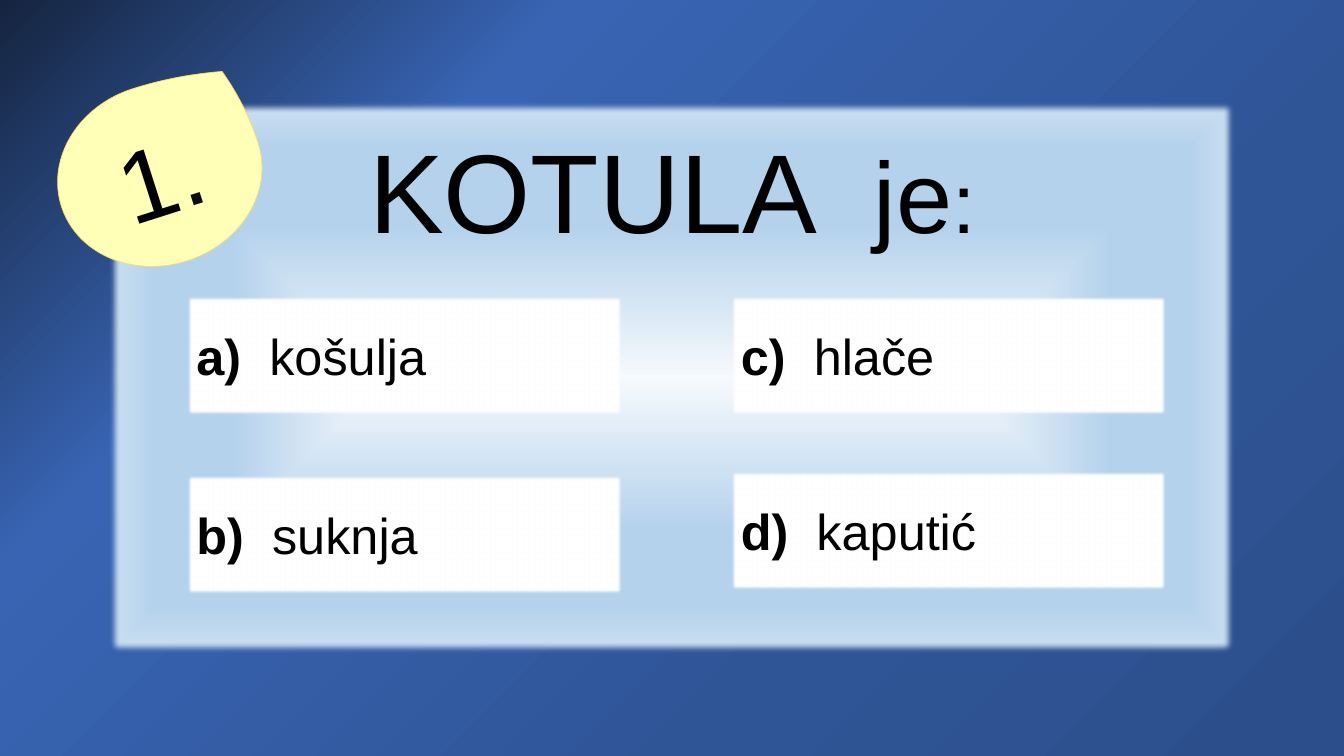
"""Build a quiz slide with one question and four possible answers."""
import dataclasses

import pptx
import pptx.dml.color
import pptx.enum.shapes
import pptx.enum.text
import pptx.oxml.ns
import pptx.oxml.xmlchemy
import pptx.util
from lxml import etree

EMU_PER_PX = 9144
ALIGN = pptx.enum.text.PP_ALIGN
ANCHOR = pptx.enum.text.MSO_ANCHOR
SHAPES = pptx.enum.shapes.MSO_SHAPE


@dataclasses.dataclass(frozen=True)
class Theme:
    font: str = "Arial"
    ink: str = "000000"
    dot: str = "0D0D0D"
    answer_fill: str = "FFFFFF"
    badge_fill: str = "FFFFB7"
    badge_line: str = "FFD966"
    background: tuple = ((0, "15243F"), (27, "3864B3"), (69, "2F5597"), (97, "2C4F8C"))
    panel: tuple = ((0, "F7FAFD"), (54, "B5D2EC"), (83, "B5D2EC"), (100, "CEE1F2"))
    word_size: int = 80
    verb_size: int = 72
    colon_size: int = 60
    badge_size: int = 72
    answer_size: int = 36


THEME = Theme()


def px(length):
    return pptx.util.Emu(length * EMU_PER_PX)


def rgb(value):
    return pptx.dml.color.RGBColor.from_string(value)


def add_child(parent, tag, **attributes):
    values = {name: str(value) for name, value in attributes.items()}
    return etree.SubElement(parent, pptx.oxml.ns.qn(tag), values)


def paint_gradient(fill, owner, stops, from_centre=False):
    fill.gradient()
    gradient = next(owner.iter(pptx.oxml.ns.qn("a:gradFill")))
    for child in list(gradient):
        gradient.remove(child)
    stop_list = add_child(gradient, "a:gsLst")
    for position, colour in stops:
        stop = add_child(stop_list, "a:gs", pos=position * 1000)
        add_child(stop, "a:srgbClr", val=colour)
    if from_centre:
        centre = add_child(gradient, "a:path", path="shape")
        add_child(centre, "a:fillToRect", l=50000, t=50000, r=50000, b=50000)
    else:
        add_child(gradient, "a:lin", ang=45 * 60000, scaled=0)


def add_block(slide, kind, left, top, width, height, fill=None):
    shape = slide.shapes.add_shape(kind, px(left), px(top), px(width), px(height))
    shape.shadow.inherit = False
    shape.line.fill.background()
    if fill:
        shape.fill.solid()
        shape.fill.fore_color.rgb = rgb(fill)
    return shape


def soften_edge(shape, radius):
    effects = next(shape._element.iter(pptx.oxml.ns.qn("a:effectLst")))
    add_child(effects, "a:softEdge", rad=px(radius))


def write_runs(shape, runs, alignment, anchor=ANCHOR.MIDDLE):
    shape.text_frame.vertical_anchor = anchor
    shape.text_frame.word_wrap = True
    paragraph = shape.text_frame.paragraphs[0]
    paragraph.alignment = alignment
    for text, size, colour, bold in runs:
        run = paragraph.add_run()
        run.text = text
        run.font.name = THEME.font
        run.font.size = pptx.util.Pt(size)
        run.font.color.rgb = rgb(colour)
        run.font.bold = bold


def add_question(slide):
    panel = add_block(slide, SHAPES.RECTANGLE, 107, 100, 1120, 550)
    paint_gradient(panel.fill, panel._element, THEME.panel, from_centre=True)
    soften_edge(panel, 7)
    panel.text_frame.margin_top = px(21)
    runs = [
        ("KOTULA  ", THEME.word_size, THEME.ink, False),
        ("je", THEME.verb_size, THEME.ink, False),
        (":", THEME.colon_size, THEME.ink, False),
    ]
    write_runs(panel, runs, ALIGN.CENTER, ANCHOR.TOP)


def add_answer(slide, left, top, letter, answer):
    box = add_block(slide, SHAPES.RECTANGLE, left, top, 432, 119, THEME.answer_fill)
    soften_edge(box, 3)
    runs = [
        (f"{letter})  ", THEME.answer_size, THEME.ink, True),
        (answer, THEME.answer_size, THEME.ink, False),
    ]
    write_runs(box, runs, ALIGN.LEFT)


def add_badge(slide, number):
    badge = add_block(slide, SHAPES.TEAR, 56, 84, 205, 179, THEME.badge_fill)
    badge.adjustments[0] = 0.88
    badge.rotation = 342.2
    badge.line.color.rgb = rgb(THEME.badge_line)
    badge.line.width = pptx.util.Pt(0.5)
    runs = [
        (number, THEME.badge_size, THEME.ink, False),
        (".", THEME.badge_size, THEME.dot, False),
    ]
    write_runs(badge, runs, ALIGN.CENTER)


def main():
    presentation = pptx.Presentation()
    presentation.slide_width = px(1333)
    presentation.slide_height = px(750)
    slide = presentation.slides.add_slide(presentation.slide_layouts[6])
    paint_gradient(slide.background.fill, slide.element, THEME.background)
    add_question(slide)
    answers = [
        (185, 293, "a", "košulja"),
        (725, 293, "c", "hlače"),
        (185, 471, "b", "suknja"),
        (725, 467, "d", "kaputić"),
    ]
    for left, top, letter, answer in answers:
        add_answer(slide, left, top, letter, answer)
    add_badge(slide, "1")
    presentation.save("out.pptx")


if __name__ == "__main__":
    main()
